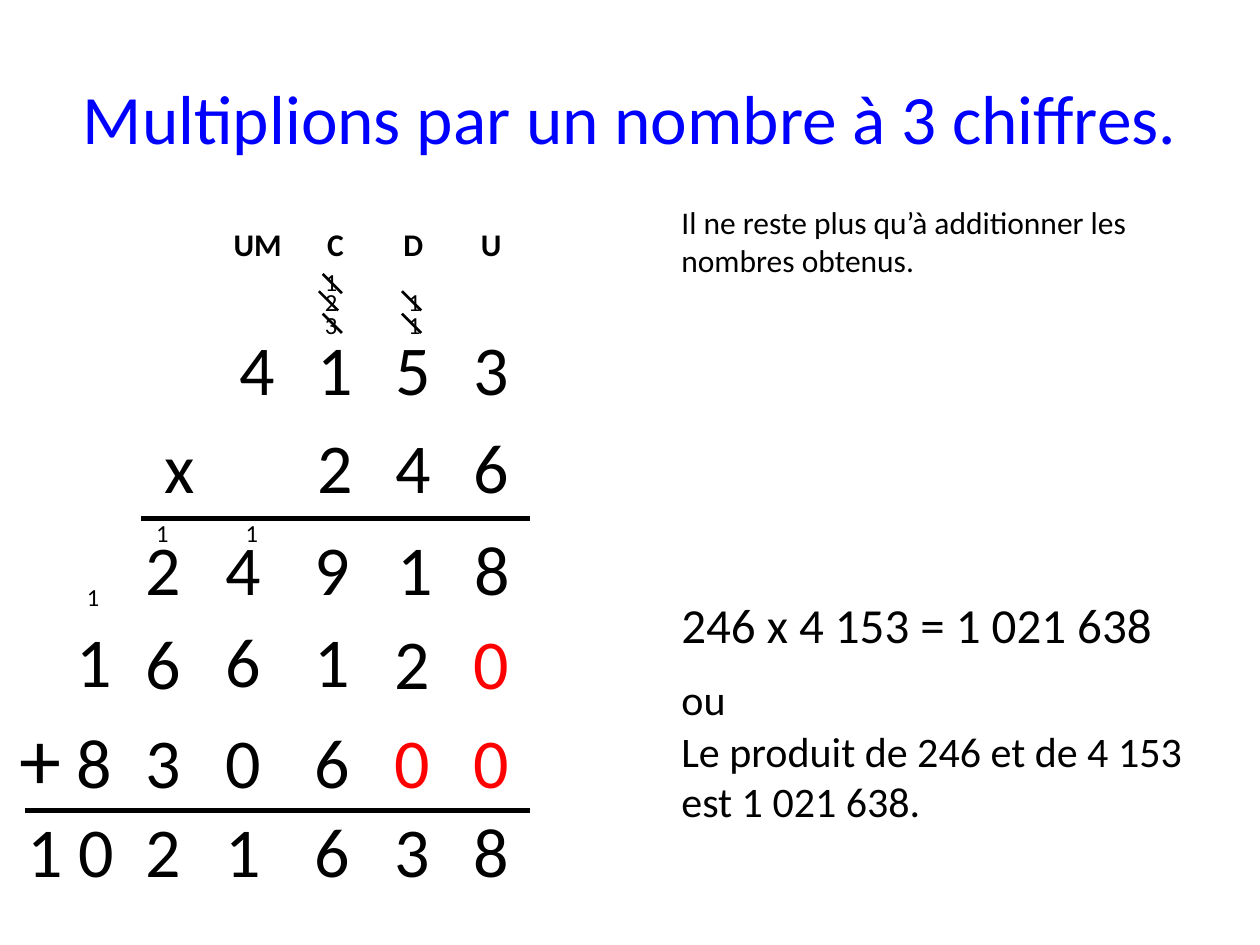
from lxml.etree import SubElement
from pptx import Presentation
from pptx.dml.color import RGBColor
from pptx.enum.shapes import MSO_CONNECTOR
from pptx.enum.text import MSO_ANCHOR, PP_ALIGN
from pptx.oxml import parse_xml
from pptx.oxml.ns import nsdecls, qn
from pptx.util import Pt

FONT, BLACK, RED, BLUE = "Calibri", "000000", "FF0000", "0000FF"
NO_STYLE = "{2D5ABB26-0587-4C30-8999-92F81FD0307C}"

# Content: the sum, one row per line, one column per digit
TITLE = "Multiplions par un nombre à 3 chiffres."
HEAD = [
    ["", "", "UM", "C", "D", "U"],
    [""] * 6,
    ["", "", "4", "1", "5", "3"],
    ["", "x", "", "2", "4", "6"],
]
HEAD_ROWS = [29.2, 29.2, 55.1, 55.1]
COLS = [36.7, 76.3, 121.7, 172.8, 218.2, 263.5]
# Top, digits right-aligned on the columns, count of red zeros
ROWS = [
    (296.6, "24918", 0),
    (350.6, "166120", 1),
    (406.8, "830600", 2),
    (457.9, "21638", 0),
]
# Small shifts by (row, column)
SHIFT = {(0, 4): (2, 0), (0, 5): (0.7, 0),
         (1, 0): (0, -1.4), (1, 2): (0, -1.4), (1, 3): (0, -1.4)}
# Carried digit, left, top, offset of its strike or None
CARRY = [
    ("1", 178.6, 149, (5.8, 7.6)),
    ("2", 178.6, 160.6, (3.6, 5.8)),
    ("3", 178.6, 173.5, (5.8, 5.8)),
    ("1", 226.1, 160.6, (3.6, 5.8)),
    ("1", 226.1, 173.5, (3.6, 5.8)),
    ("1", 133.2, 292.3, None),
    ("1", 82.1, 292.3, None),
    ("1", 42.5, 329, None),
]
# Text, left, top, width, height, size
OTHER = [
    ("+", 4.3, 400.3, 38.2, 65.5, 48),
    ("1 0", 8.6, 457.9, 67.7, 55.4, 40),
    ("Il ne reste plus qu’à additionner les nombres obtenus.",
     382.3, 112.3, 302.4, 51.1, 18),
    ("246 x 4 153 = 1 021 638", 382.3, 336.2, 302.4, 41, 28),
]
ANSWER = "Le produit de 246 et de 4 153 est 1 021 638."


def style(para, size, color=BLACK, bold=False):
    font = para.font
    font.name, font.size, font.bold = FONT, Pt(size), bold
    font.color.rgb = RGBColor.from_string(color)


def write(text, x, y, w, h, size, color=BLACK):
    frame = slide.shapes.add_textbox(Pt(x), Pt(y), Pt(w), Pt(h)).text_frame
    frame.word_wrap = True
    frame.text = text
    style(frame.paragraphs[0], size, color)
    return frame


def draw(x1, y1, x2, y2, width):
    line = slide.shapes.add_connector(
        MSO_CONNECTOR.STRAIGHT, Pt(x1), Pt(y1), Pt(x2), Pt(y2))
    line.line.width = Pt(width)
    line.line.color.rgb = RGBColor.from_string(BLACK)
    SubElement(line.element.spPr, qn("a:effectLst"))


def rule(cell):
    cell.fill.background()
    border = parse_xml(
        f'<a:lnB {nsdecls("a")} w="{Pt(3)}"><a:solidFill>'
        f'<a:srgbClr val="{BLACK}"/></a:solidFill></a:lnB>')
    cell._tc.get_or_add_tcPr().insert(0, border)


deck = Presentation()
deck.slide_width, deck.slide_height = Pt(720), Pt(540)
slide = deck.slides.add_slide(deck.slide_layouts[5])

# Title
title = slide.shapes.title
title.left, title.top, title.width, title.height = Pt(36), Pt(21.6), Pt(648), Pt(90)
title.text_frame.text = TITLE
title.text_frame.vertical_anchor = MSO_ANCHOR.MIDDLE
title.text_frame.paragraphs[0].alignment = PP_ALIGN.CENTER
style(title.text_frame.paragraphs[0], 39.6, BLUE)

# Table with the two factors
table = slide.shapes.add_table(
    4, 6, Pt(36), Pt(126), Pt(267), Pt(sum(HEAD_ROWS))).table
table.first_row = table.horz_banding = False
table._tbl.tblPr.find(qn("a:tableStyleId")).text = NO_STYLE
for col in table.columns:
    col.width = Pt(44.5)
for r, words in enumerate(HEAD):
    table.rows[r].height = Pt(HEAD_ROWS[r])
    for c, word in enumerate(words):
        cell = table.cell(r, c)
        cell.fill.background()
        cell.vertical_anchor = MSO_ANCHOR.MIDDLE
        if word:
            cell.text = word
            para = cell.text_frame.paragraphs[0]
            para.alignment = PP_ALIGN.CENTER
            style(para, 40 if r else 18, bold=r == 0)
        if r == 3 and c:
            rule(cell)

# Partial products and total
for r, (top, digits, zeros) in enumerate(ROWS):
    first = len(COLS) - len(digits)
    for c, digit in enumerate(digits, first):
        dx, dy = SHIFT.get((r, c), (0, 0))
        color = RED if c >= len(COLS) - zeros else BLACK
        write(digit, COLS[c] + dx, top + dy, 45.4, 55.4, 40, color)
draw(14.4, 463, 303.1, 463, 3)

# Carried digits and their strikes
for digit, x, y, strike in CARRY:
    write(digit, x, y, 20.9, 24.5, 14)
    if strike:
        x, y = x + strike[0], y + strike[1]
        draw(x, y, x + 11, y + 11, 1.5)

# Plus sign, leading digits and notes
for item in OTHER:
    write(*item)
frame = write("ou", 382.3, 377.3, 302.4, 99.4, 24)
gap = frame.paragraphs[0].add_run()
gap.text = " "
gap.font.size = Pt(28)
last = frame.add_paragraph()
last.text = ANSWER
style(last, 24)

deck.save("out.pptx")
